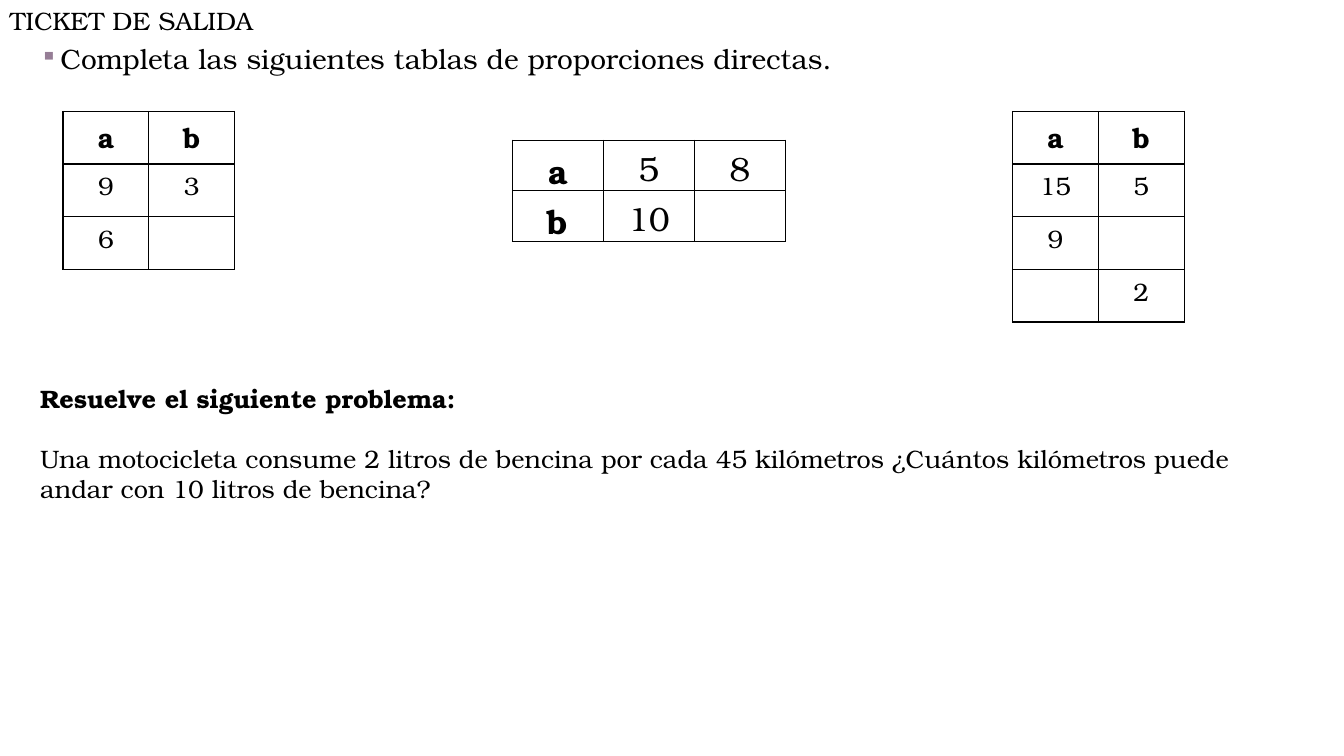
from dataclasses import dataclass

from lxml.etree import SubElement
from pptx import Presentation
from pptx.dml.color import RGBColor
from pptx.enum.text import PP_ALIGN
from pptx.oxml import parse_xml
from pptx.oxml.ns import nsdecls, qn
from pptx.slide import Slide
from pptx.table import _Cell
from pptx.text.text import _Paragraph
from pptx.util import Pt

COLORS = {"ink": "000000", "bullet": "967E96", "paper": "FFFFFF"}
FONT = "TeX Gyre Bonum"


@dataclass
class TextBlock:
    left: float
    top: float
    width: float
    height: float
    paragraphs: list[str]
    size: float = 18
    wrap: bool = True
    bold_first: bool = False
    gap: float = 0
    bulleted: bool = False


@dataclass
class ProportionTable:
    """A grid of values; names a and b are bold, an empty string is to be completed."""
    left: float
    top: float
    column_width: float
    row_height: float
    rows: list[list[str]]
    name_size: float
    value_size: float


TEXTS = [
    TextBlock(21.6, 28.8, 916.6, 318.2,
              ["Completa las siguientes tablas de proporciones directas."],
              size=20, bulleted=True),
    TextBlock(0, 0, 190.8, 28.8, ["TICKET DE SALIDA"], wrap=False),
    TextBlock(21.6, 270, 907.2, 94.3,
              ["Resuelve el siguiente problema:",
               "Una motocicleta consume 2 litros de bencina por cada 45 kilómetros "
               "¿Cuántos kilómetros puede andar con 10 litros de bencina?"],
              bold_first=True, gap=21.5),
]
TABLES = [
    ProportionTable(45, 79.6, 61.3, 37.6,
                    [["a", "b"], ["9", "3"], ["6", ""]], 20, 18),
    ProportionTable(723.3, 79.6, 61.3, 37.6,
                    [["a", "b"], ["15", "5"], ["9", ""], ["", "2"]], 20, 18),
    ProportionTable(366, 100.2, 65, 36,
                    [["a", "5", "8"], ["b", "10", ""]], 24, 24),
]


def format_spans(para: _Paragraph, size: float, bold: bool) -> None:
    for span in para.runs:
        span.font.name = FONT
        span.font.size = Pt(size)
        span.font.bold = bold
        span.font.color.rgb = RGBColor.from_string(COLORS["ink"])


def add_bullet(para: _Paragraph) -> None:
    para.line_spacing = 0.9
    properties = para._p.get_or_add_pPr()
    properties.set("marL", str(Pt(14.4)))
    properties.set("indent", str(-Pt(14.4)))
    color = SubElement(properties, qn("a:buClr"))
    SubElement(color, qn("a:srgbClr"), val=COLORS["bullet"])
    SubElement(properties, qn("a:buSzPct"), val="85000")
    SubElement(properties, qn("a:buChar"), char="▪")


def add_text(page: Slide, block: TextBlock) -> None:
    box = page.shapes.add_textbox(
        Pt(block.left), Pt(block.top), Pt(block.width), Pt(block.height))
    frame = box.text_frame
    frame.word_wrap = block.wrap
    frame.text = "\n".join(block.paragraphs)
    for index, para in enumerate(frame.paragraphs):
        if index:
            para.space_before = Pt(block.gap)
        if block.bulleted:
            add_bullet(para)
        format_spans(para, block.size, block.bold_first and index == 0)


def set_borders(cell: _Cell) -> None:
    properties = cell._tc.get_or_add_tcPr()
    for index, side in enumerate("LRTB"):
        properties.insert(index, parse_xml(
            f'<a:ln{side} {nsdecls("a")} w="{Pt(1)}"><a:solidFill>'
            f'<a:srgbClr val="{COLORS["ink"]}"/></a:solidFill></a:ln{side}>'))


def add_proportion_table(page: Slide, grid: ProportionTable) -> None:
    row_count, column_count = len(grid.rows), len(grid.rows[0])
    table = page.shapes.add_table(
        row_count, column_count, Pt(grid.left), Pt(grid.top),
        Pt(grid.column_width * column_count), Pt(grid.row_height * row_count)).table
    table.first_row = False
    table.horz_banding = False
    for column in table.columns:
        column.width = Pt(grid.column_width)
    for row, values in zip(table.rows, grid.rows):
        row.height = Pt(grid.row_height)
        for cell, value in zip(row.cells, values):
            cell.fill.solid()
            cell.fill.fore_color.rgb = RGBColor.from_string(COLORS["paper"])
            set_borders(cell)
            cell.text_frame.text = value
            para = cell.text_frame.paragraphs[0]
            para.alignment = PP_ALIGN.CENTER
            is_name = value in ("a", "b")
            format_spans(para, grid.name_size if is_name else grid.value_size, is_name)


def main() -> None:
    deck = Presentation()
    deck.slide_width, deck.slide_height = Pt(960), Pt(540)
    page = deck.slides.add_slide(deck.slide_layouts[6])
    for block in TEXTS:
        add_text(page, block)
    for grid in TABLES:
        add_proportion_table(page, grid)
    deck.save("out.pptx")


if __name__ == "__main__":
    main()
